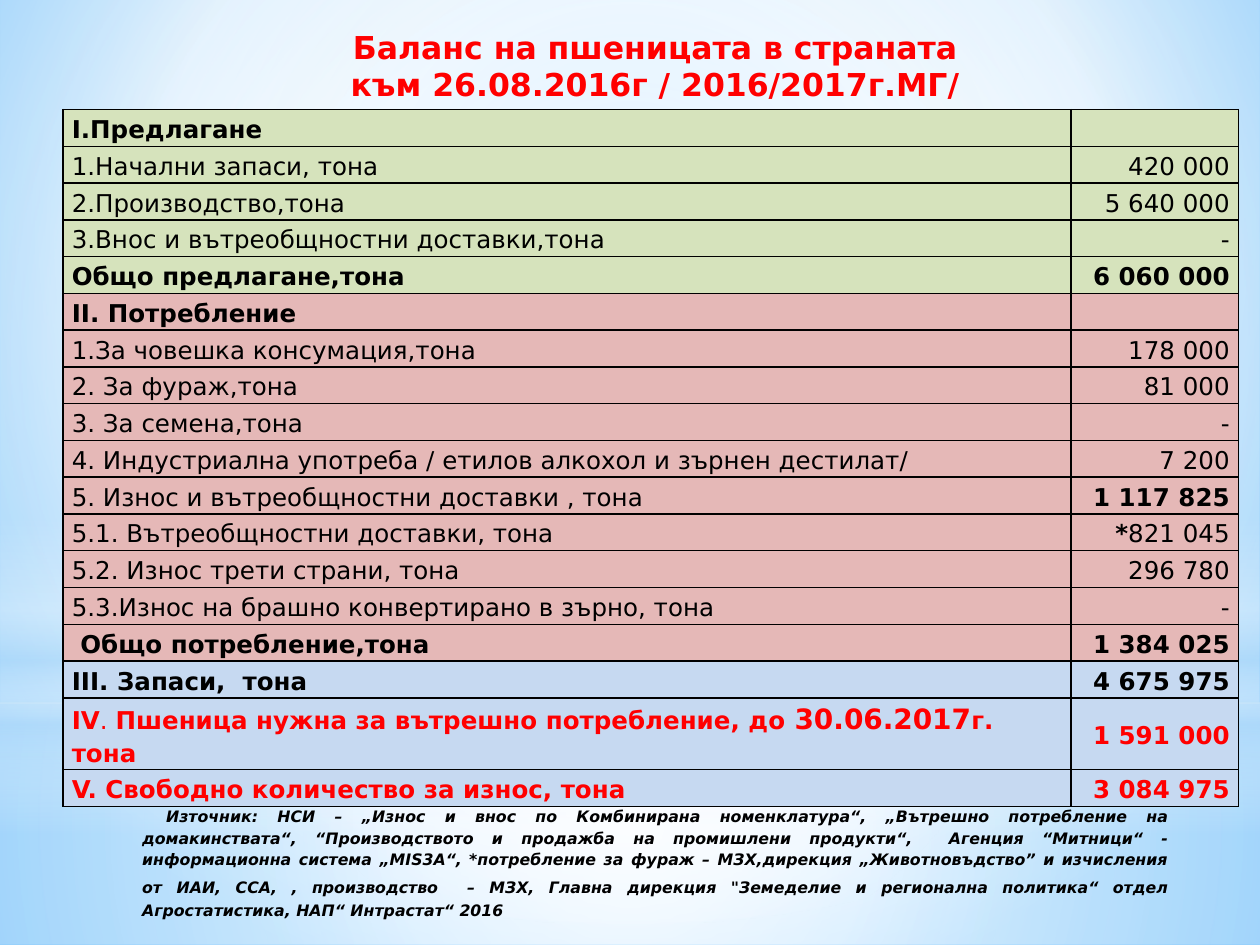
from lxml import etree
from pptx import Presentation
from pptx import util as u
from pptx.dml import color
from pptx.enum import shapes, text
from pptx.oxml import ns, parse_xml

FONT = "DejaVu Sans"
C = {"black": "000000", "red": "FF0000", "white": "FFFFFF", "sky": "B4DCFA",
     "azure": "9ED5FF", "blue": "5BB9FF",
     "supply": "D6E3BC", "demand": "E5B8B7", "stock": "C6D9F1"}
CENTRE = (50, 50, 50, 50)

# Backdrop layers: preset, box, stops (position, colour, opacity), focus or None if linear
LAYERS = [
    ("RECTANGLE", (0, 5.58, 10, 1.92),
     [(0, "white", 91), (37, "white", 76), (100, "sky", 79)], CENTRE),
    ("RECTANGLE", (0, 0, 10, 5.58),
     [(0, "white", 89), (48, "white", 62), (100, "sky", 79)], CENTRE),
    ("RECTANGLE", (0, 4.12, 10, 2.5),
     [(0, "white", 0), (29, "white", 30), (45, "sky", 40),
      (55, "white", 26), (65, "sky", 60), (100, "white", 0)], None),
    ("OVAL", (0, 1.75, 10, 5.58), [(0, "white", 100), (56, "white", 0)], CENTRE),
]

# A cell is a list of runs: (text, format overrides)
B = {"bold": True}
R = {"bold": True, "color": "red"}
SECTIONS = [
    ("supply", [
        ([("I.Предлагане", B)], []),
        ([("1.Начални запаси, тона", {})], [("420 000", {})]),
        ([("2.Производство,тона", {})], [("5 640 000", {})]),
        ([("3.Внос и вътреобщностни доставки,тона", {})], [("-", {})]),
        ([("Общо предлагане,тона", B)], [("6 060 000", B)]),
    ]),
    ("demand", [
        ([("II. Потребление", B)], []),
        ([("1.За човешка консумация,тона", {})], [("178 000", {})]),
        ([("2. За фураж,тона", {})], [("81 000", {})]),
        ([("3. За семена,тона", {})], [("-", {})]),
        ([("4. Индустриална употреба / етилов алкохол и зърнен дестилат/", {})],
         [("7 200", {})]),
        ([("5. Износ и вътреобщностни доставки , тона", {})], [("1 117 825", B)]),
        ([("5.1. Вътреобщностни доставки, тона", {})], [("*", B), ("821 045", {})]),
        ([("5.2. Износ трети страни, тона", {})], [("296 780", {})]),
        ([("5.3.Износ на брашно конвертирано в зърно, тона", {})], [("-", {})]),
        ([(" Общо потребление,тона", B)], [("1 384 025", B)]),
    ]),
    ("stock", [
        ([("III. Запаси,  тона", B)], [("4 675 975", B)]),
        ([("IV", R), (". ", {"color": "red"}),
          ("Пшеница нужна за вътрешно потребление, до ", R),
          ("30.06.2017", {**R, "size": 16}), ("г. тона", R)], [("1 591 000", R)]),
        ([("V. Свободно количество за износ, тона", R)], [("3 084 975", R)]),
    ]),
]

TITLE = "Баланс на пшеницата в страната към 26.08.2016г / 2016/2017г.МГ/"
SOURCE = [
    ("Източник: НСИ – „Износ и внос по Комбинирана номенклатура“, „Вътрешно потребление "
     "на домакинствата“, “Производството и продажба на промишлени продукти“,  Агенция "
     "“Митници“ - информационна система „MIS3A“,", {}),
    (" *", {"italic": False}),
    ("потребление за фураж – МЗХ,дирекция „Животновъдство” и изчисления от ИАИ, ССА, , "
     "производство  – МЗХ, Главна дирекция \"Земеделие и регионална политика“ отдел", {}),
    (" ", {"size": 12}),
    ("Агростатистика, НАП“ Интрастат“ 2016", {}),
]


def set_gradient(fill, parent, stops, focus):
    """Put a gradient with opacity in place of the plain one."""
    fill.gradient()
    gs = "".join(f'<a:gs pos="{pos * 1000}"><a:srgbClr val="{C[name]}">'
                 f'<a:alpha val="{alpha * 1000}"/></a:srgbClr></a:gs>'
                 for pos, name, alpha in stops)
    if focus:
        sides = " ".join(f'{k}="{v * 1000}"' for k, v in zip("ltrb", focus))
        shade = f'<a:path path="circle"><a:fillToRect {sides}/></a:path>'
    else:
        shade = '<a:lin ang="5400000" scaled="0"/>'
    old = parent.find(".//" + ns.qn("a:gradFill"))
    old.getparent().replace(old, parse_xml(
        f'<a:gradFill {ns.nsdecls("a")} rotWithShape="1"><a:gsLst>{gs}</a:gsLst>{shade}</a:gradFill>'))


def add_runs(p, runs, **base):
    for wording, extra in runs:
        fmt = {"name": FONT, "color": "black", **base, **extra}
        r = p.add_run()
        r.text = wording
        r.font.color.rgb = color.RGBColor.from_string(C[fmt.pop("color")])
        fmt["size"] = u.Pt(fmt["size"])
        for key, value in fmt.items():
            setattr(r.font, key, value)


def add_backdrop(s):
    bg = s.background
    set_gradient(bg.fill, s.element,
                 [(0, "azure", 100), (60, "white", 100), (100, "blue", 100)], (20, 10, 20, 60))
    for preset, box, stops, focus in LAYERS:
        sp = s.shapes.add_shape(getattr(shapes.MSO_SHAPE, preset), *map(u.Inches, box))
        sp.shadow.inherit = False
        sp.line.fill.background()
        set_gradient(sp.fill, sp.element.spPr, stops, focus)


def add_border(cell):
    tcPr = cell._tc.get_or_add_tcPr()
    for side in "LRTB":
        ln = etree.SubElement(tcPr, ns.qn(f"a:ln{side}"), w=str(u.Pt(1)))
        fill = etree.SubElement(ln, ns.qn("a:solidFill"))
        etree.SubElement(fill, ns.qn("a:srgbClr"), val=C["black"])


def fill_cell(cell, runs, fill, align):
    add_border(cell)
    cell.fill.solid()
    cell.fill.fore_color.rgb = color.RGBColor.from_string(C[fill])
    for key, value in {"margin_left": u.Inches(0.07), "margin_right": u.Inches(0.07),
                       "margin_top": 0, "margin_bottom": 0,
                       "vertical_anchor": text.MSO_ANCHOR.MIDDLE}.items():
        setattr(cell, key, value)
    p = cell.text_frame.paragraphs[0]
    p.alignment, p.line_spacing = align, 1.15
    add_runs(p, runs, size=14, bold=False)
    if not runs:  # keeps an empty cell from stretching its row
        etree.SubElement(p._p, ns.qn("a:endParaRPr"), sz="1400")


def add_balance(s, left, top, width, height):
    rows = [(fill, *row) for fill, group in SECTIONS for row in group]
    wrapped = 0.57  # the one row with two lines
    row_height = (height - wrapped) / (len(rows) - 1)
    table = s.shapes.add_table(len(rows), 2, *map(u.Inches, (left, top, width, height))).table
    table.first_row = table.horz_banding = False
    for col, w in zip(table.columns, (8, width - 8)):
        col.width = u.Inches(w)
    for i, (fill, label, amount) in enumerate(rows):
        table.rows[i].height = u.Inches(wrapped if len(label) > 1 else row_height)
        fill_cell(table.cell(i, 0), label, fill, text.PP_ALIGN.LEFT)
        fill_cell(table.cell(i, 1), amount, fill, text.PP_ALIGN.RIGHT)


def add_text(s, box, runs, align, **base):
    tf = s.shapes.add_textbox(*map(u.Inches, box)).text_frame
    tf.word_wrap = True
    p = tf.paragraphs[0]
    p.alignment = align
    add_runs(p, runs, bold=True, **base)
    return p


def add_source(s, box):
    p = add_text(s, box, SOURCE, text.PP_ALIGN.JUSTIFY, size=9, italic=True)
    p.line_spacing = 1.15
    p._p.get_or_add_pPr().set("indent", str(u.Inches(0.19)))


def main():
    prs = Presentation()
    prs.slide_width, prs.slide_height = u.Inches(10), u.Inches(7.5)
    s = prs.slides.add_slide(prs.slide_layouts[6])
    add_backdrop(s)
    add_balance(s, 0.5, 0.87, 9.33, 5.53)
    add_text(s, (2.45, 0.17, 5.5, 0.71), [(TITLE, {})], text.PP_ALIGN.CENTER,
             size=18, color="red")
    add_source(s, (1.03, 6.33, 8.33, 1.1))
    prs.save("out.pptx")


if __name__ == "__main__":
    main()
